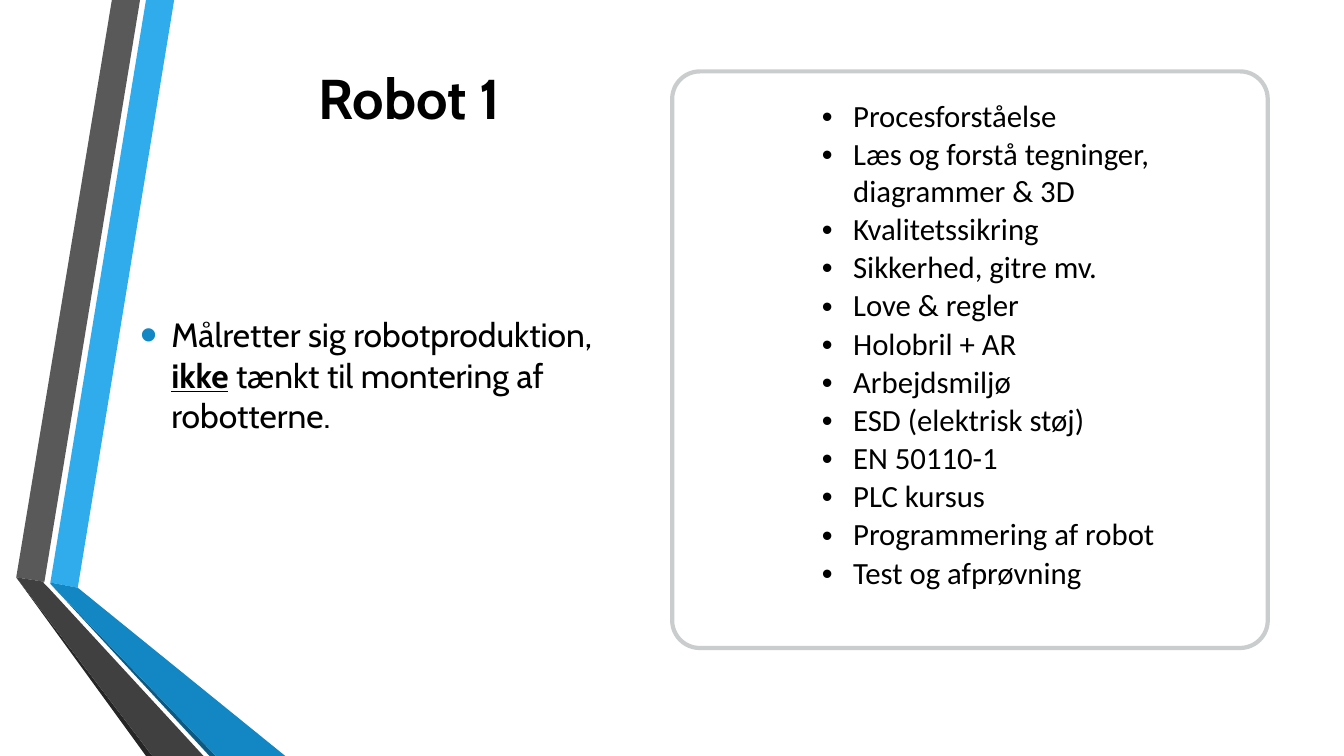
from lxml import etree
from pptx import Presentation
from pptx import util as u
from pptx.dml.color import RGBColor
from pptx.enum import shapes, text
from pptx.oxml import ns

COLORS = {
    "black": "000000", "white": "FFFFFF", "border": "979D9F",
    "sky": "30ACEC", "blue": "1287C3", "navy": "0C5A82",
    "gray": "595959", "charcoal": "404040", "coal": "262626",
}
RIBBONS = [
    ("sky", [(1.27, 14.68), (1.96, 14.81), (4.39, 0), (3.68, 0)]),
    ("gray", [(3.53, 0), (2.82, 0), (0.41, 14.55), (1.12, 14.66)]),
    ("coal", [(0.41, 14.55), (3.68, 19.05), (3.84, 19.05)]),
    ("navy", [(1.27, 14.71), (5.28, 19.05), (5.44, 19.05)]),
    ("blue", [(1.27, 14.71), (5.44, 19.05), (7.19, 19.05), (1.96, 14.81), (1.27, 14.68)]),
    ("charcoal", [(5.13, 19.05), (1.22, 14.81), (1.09, 14.68), (1.12, 14.66),
                  (0.41, 14.55), (3.84, 19.05)]),
]
TOPICS = [
    "Procesforståelse", "Læs og forstå tegninger, diagrammer & 3D",
    "Kvalitetssikring", "Sikkerhed, gitre mv.", "Love & regler",
    "Holobril + AR", "Arbejdsmiljø", "ESD (elektrisk støj)", "EN 50110-1",
    "PLC kursus", "Programmering af robot", "Test og afprøvning",
]
INDENT = u.Cm(0.79)


def rgb(name):
    """Return the named palette colour."""
    return RGBColor.from_string(COLORS[name])


def style_span(span, font, size, bold=False):
    """Format one run of black text."""
    span.font.name = font
    span.font.size = u.Pt(size)
    span.font.bold = bold
    span.font.color.rgb = rgb("black")


def add_bullet(para, color="black", percent=100):
    """Give a paragraph a round bullet and a hanging indent."""
    props = para._p.get_or_add_pPr()
    props.set("marL", str(INDENT))
    props.set("indent", str(-INDENT))
    tint = etree.SubElement(props, ns.qn("a:buClr"))
    etree.SubElement(tint, ns.qn("a:srgbClr"), val=COLORS[color])
    etree.SubElement(props, ns.qn("a:buSzPct"), val=str(percent * 1000))
    etree.SubElement(props, ns.qn("a:buFont"), typeface="Arial")
    etree.SubElement(props, ns.qn("a:buChar"), char="•")


def add_ribbon(group, color, points):
    """Draw one filled polygon of the side decoration."""
    corners = [(u.Cm(x), u.Cm(y)) for x, y in points]
    builder = group.shapes.build_freeform(*corners[0])
    builder.add_line_segments(corners[1:], close=True)
    ribbon = builder.convert_to_shape()
    ribbon.shadow.inherit = False
    ribbon.fill.solid()
    ribbon.fill.fore_color.rgb = rgb(color)
    ribbon.line.fill.background()


def add_text_box(page, left, top, width, height):
    """Add a wrapping, vertically centred box and return its first paragraph."""
    box = page.shapes.add_textbox(u.Cm(left), u.Cm(top), u.Cm(width), u.Cm(height))
    box.text_frame.word_wrap = True
    box.text_frame.vertical_anchor = text.MSO_ANCHOR.MIDDLE
    return box.text_frame.paragraphs[0]


def add_title(page):
    """Add the centred heading."""
    para = add_text_box(page, 4.37, 0, 11.89, 4.88)
    para.text = "Robot 1"
    para.alignment = text.PP_ALIGN.CENTER
    style_span(para.runs[0], "Cabin", 40, bold=True)


def add_purpose(page):
    """Add the bulleted statement with its stressed word."""
    para = add_text_box(page, 3.28, 4.72, 12.73, 9.45)
    para.space_after = u.Pt(6)
    add_bullet(para, "blue", 145)
    for words, stressed in [("Målretter sig robotproduktion, ", False), ("ikke", True),
                            (" tænkt til montering af robotterne.", False)]:
        span = para.add_run()
        span.text = words
        style_span(span, "Cabin", 24, stressed)
        span.font.underline = stressed


def add_panel(page):
    """Add the rounded frame behind the topics."""
    panel = page.shapes.add_shape(shapes.MSO_SHAPE.ROUNDED_RECTANGLE,
                                  u.Cm(16.94), u.Cm(1.8), u.Cm(15.01), u.Cm(14.53))
    panel.adjustments[0] = 0.048
    panel.shadow.inherit = False
    panel.fill.solid()
    panel.fill.fore_color.rgb = rgb("white")
    panel.line.width = u.Pt(3)
    panel.line.color.rgb = rgb("border")
    tint = panel.line._ln.find(".//" + ns.qn("a:srgbClr"))
    etree.SubElement(tint, ns.qn("a:alpha"), val="50000")


def add_topics(page):
    """Add the one-column table of topics with an empty last row."""
    count = len(TOPICS) + 1
    frame = page.shapes.add_table(count, 1, u.Cm(20.68), u.Cm(2.44),
                                  u.Cm(8.81), u.Cm(0.79 * count))
    table = frame.table
    table.first_row = table.horz_banding = False
    for row in table.rows:
        row.height = u.Cm(0.79)
        row.cells[0].fill.background()
    table.rows[count - 1].height = u.Cm(1.27)
    for index, topic in enumerate(TOPICS):
        cell = table.cell(index, 0)
        cell.margin_left = cell.margin_right = cell.margin_top = u.Cm(0.03)
        cell.margin_bottom = 0
        cell.vertical_anchor = text.MSO_ANCHOR.BOTTOM
        para = cell.text_frame.paragraphs[0]
        para.text = topic
        add_bullet(para)
        style_span(para.runs[0], "Calibri", 22)


def main():
    """Build and save the slide."""
    deck = Presentation()
    deck.slide_width, deck.slide_height = u.Cm(33.87), u.Cm(19.05)
    page = deck.slides.add_slide(deck.slide_layouts[6])
    group = page.shapes.add_group_shape()
    for color, points in RIBBONS:
        add_ribbon(group, color, points)
    add_title(page)
    add_purpose(page)
    add_panel(page)
    add_topics(page)
    deck.save("out.pptx")


if __name__ == "__main__":
    main()
